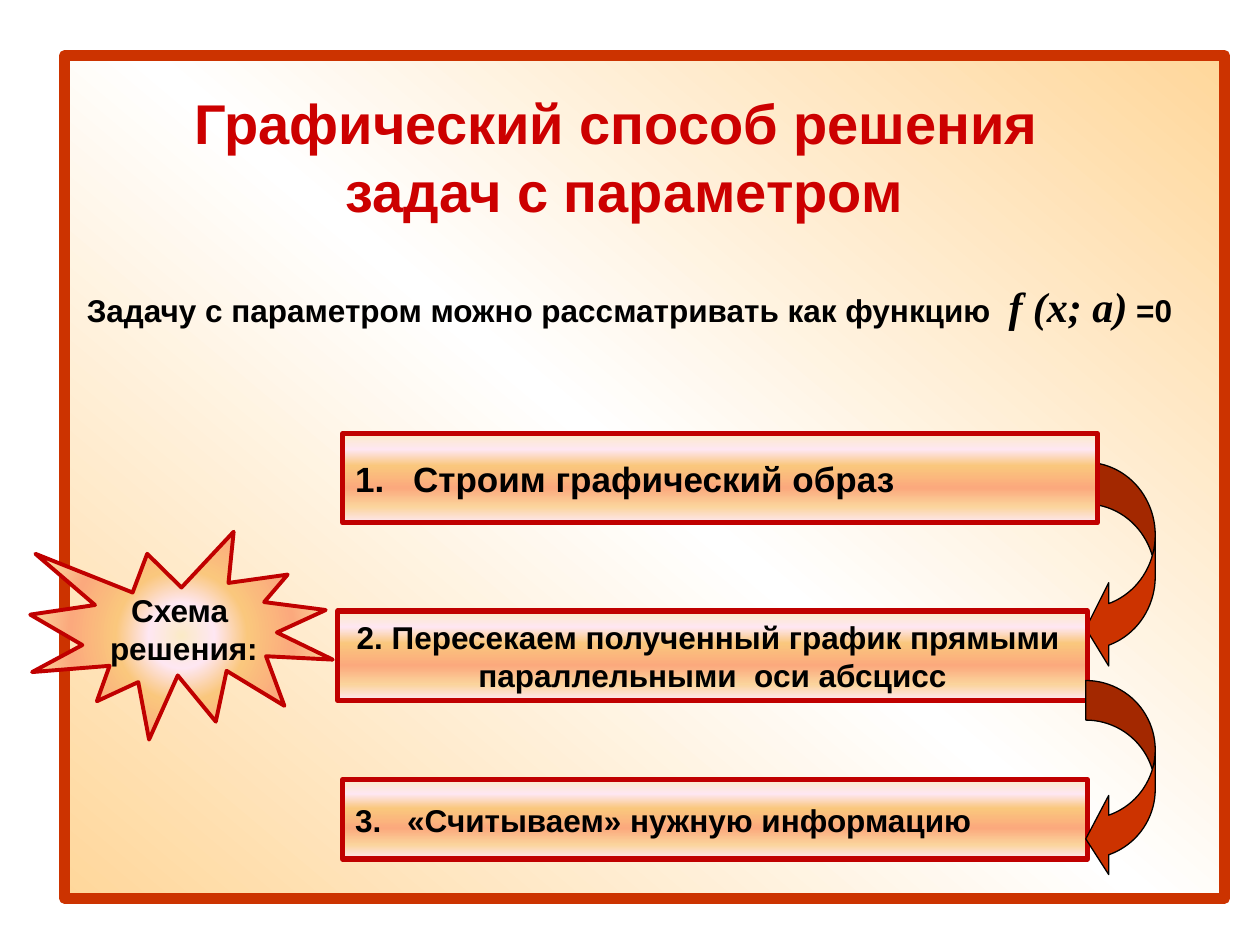
from lxml import etree
from pptx import Presentation
from pptx.dml.color import RGBColor
from pptx.enum.shapes import MSO_SHAPE
from pptx.enum.text import MSO_ANCHOR, PP_ALIGN
from pptx.oxml.ns import qn
from pptx.util import Cm, Pt

RECT = MSO_SHAPE.RECTANGLE
BURST = MSO_SHAPE.EXPLOSION1
CURVED_ARROW = MSO_SHAPE.CURVED_RIGHT_ARROW
LEFT = PP_ALIGN.LEFT
CENTER = PP_ALIGN.CENTER
MIDDLE = MSO_ANCHOR.MIDDLE

BLACK = RGBColor(0x00, 0x00, 0x00)
WHITE = RGBColor(0xFF, 0xFF, 0xFF)
PEACH = RGBColor(0xFF, 0xD7, 0x9B)
ORANGE = RGBColor(0xCC, 0x33, 0x00)
RED = RGBColor(0xCC, 0x00, 0x00)
DARK_RED = RGBColor(0xC0, 0x00, 0x00)
CREAM = RGBColor(0xFB, 0xEA, 0xC7)
PINK = RGBColor(0xFE, 0xE7, 0xF2)
GOLD = RGBColor(0xFA, 0xC7, 0x7D)
SALMON = RGBColor(0xFB, 0xA9, 0x7D)
SAND = RGBColor(0xFB, 0xD4, 0x9C)

FRAME_STOPS = [(0, PEACH), (50, WHITE), (100, PEACH)]
STEP_STOPS = [(0, CREAM), (18, PINK), (36, GOLD),
              (61, SALMON), (82, SAND), (100, PINK)]


def add_shape(slide, kind, box, line_color, line_width):
    s = slide.shapes.add_shape(kind, *map(Cm, box))
    s.shadow.inherit = False
    s.line.color.rgb = line_color
    s.line.width = Pt(line_width)
    return s


def fill_gradient(s, stops, angle=None):
    s.fill.gradient()
    grad = s._element.spPr.find(qn("a:gradFill"))
    for child in list(grad):
        grad.remove(child)
    stop_list = etree.SubElement(grad, qn("a:gsLst"))
    for position, color in stops:
        stop = etree.SubElement(stop_list, qn("a:gs"), pos=str(position * 1000))
        etree.SubElement(stop, qn("a:srgbClr"), val=str(color))
    if angle is None:
        path = etree.SubElement(grad, qn("a:path"), path="circle")
        center = {side: "50000" for side in "ltrb"}
        etree.SubElement(path, qn("a:fillToRect"), **center)
    else:
        etree.SubElement(grad, qn("a:lin"), ang=str(angle * 60000), scaled="0")


def format_run(r, size, color=BLACK, name="Arial", italic=False):
    r.font.size = Pt(size)
    r.font.name = name
    r.font.bold = True
    r.font.italic = italic
    r.font.color.rgb = color


def write_text(tf, text, size, align, color=BLACK):
    tf.text = text
    for p in tf.paragraphs:
        p.alignment = align
        for r in p.runs:
            format_run(r, size, color)


def add_text_box(slide, box):
    tf = slide.shapes.add_textbox(*map(Cm, box)).text_frame
    tf.word_wrap = True
    return tf


def add_title(slide):
    tf = add_text_box(slide, (0.69, 2.13, 23.8, 2.57))
    write_text(tf, "Графический способ решения \nзадач с параметром",
               32, CENTER, RED)
    for p in tf.paragraphs:
        p.line_spacing = 0.6
    tf.paragraphs[1].space_before = Pt(16)


def add_intro(slide):
    p = add_text_box(slide, (1.5, 5.54, 23.5, 1.27)).paragraphs[0]
    for text, size, name, italic in (
        ("Задачу с параметром можно рассматривать как функцию  ", 18, "Arial", False),
        ("f (x; a)", 24, "Times New Roman", True),
        (" =0", 18, "Arial", False),
    ):
        r = p.add_run()
        r.text = text
        format_run(r, size, name=name, italic=italic)


def add_step(slide, box, text, size, align=LEFT, hanging=None):
    s = add_shape(slide, RECT, box, DARK_RED, 3)
    fill_gradient(s, STEP_STOPS, 90)
    tf = s.text_frame
    tf.vertical_anchor = MIDDLE
    tf.word_wrap = True
    write_text(tf, text, size, align)
    if hanging:
        pPr = tf.paragraphs[0]._p.get_or_add_pPr()
        pPr.set("marL", str(Cm(hanging)))
        pPr.set("indent", str(-Cm(hanging)))


def add_burst(slide):
    s = add_shape(slide, BURST, (0.61, 10.72, 6.1, 4.19), DARK_RED, 2.25)
    fill_gradient(s, STEP_STOPS)
    tf = s.text_frame
    tf.vertical_anchor = MIDDLE
    tf.word_wrap = False
    write_text(tf, "Схема\n решения:", 18, CENTER)


def add_arrow(slide, top, height, thickness):
    s = add_shape(slide, CURVED_ARROW, (21.89, top, 1.4, height), BLACK, 0.75)
    s.fill.solid()
    s.fill.fore_color.rgb = ORANGE
    s._element.spPr.xfrm.set("flipH", "1")
    for i, value in enumerate((thickness, 2 * thickness, 0.33)):
        s.adjustments[i] = value


def main():
    prs = Presentation()
    prs.slide_width = Cm(25.4)
    prs.slide_height = Cm(19.05)
    slide = prs.slides.add_slide(prs.slide_layouts[6])

    frame = add_shape(slide, RECT, (1.3, 1.12, 23.39, 16.99), ORANGE, 6)
    fill_gradient(frame, FRAME_STOPS, 130)
    add_arrow(slide, 9.32, 4.19, 0.6)
    add_title(slide)
    add_intro(slide)
    add_step(slide, (6.91, 8.74, 15.21, 1.8),
             "1.\tСтроим графический образ", 20, hanging=1.17)
    add_step(slide, (6.81, 12.32, 15.11, 1.8),
             "2. Пересекаем полученный график прямыми \nпараллельными  оси абсцисс",
             18, CENTER)
    add_step(slide, (6.91, 15.72, 15.01, 1.6),
             "3.\t«Считываем» нужную информацию", 18, hanging=1.05)
    add_burst(slide)
    add_arrow(slide, 13.72, 3.99, 0.57)

    prs.save("out.pptx")


if __name__ == "__main__":
    main()
